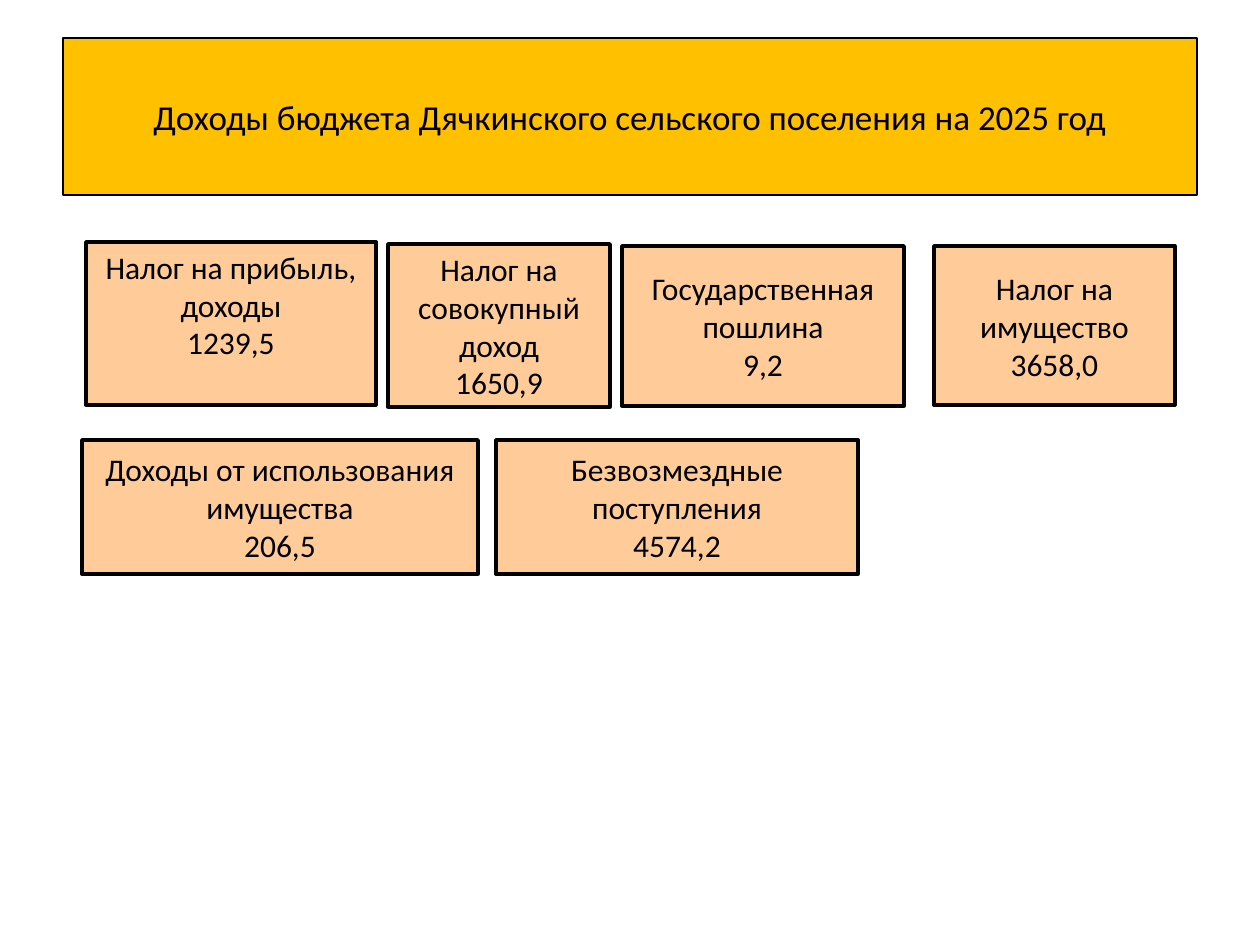
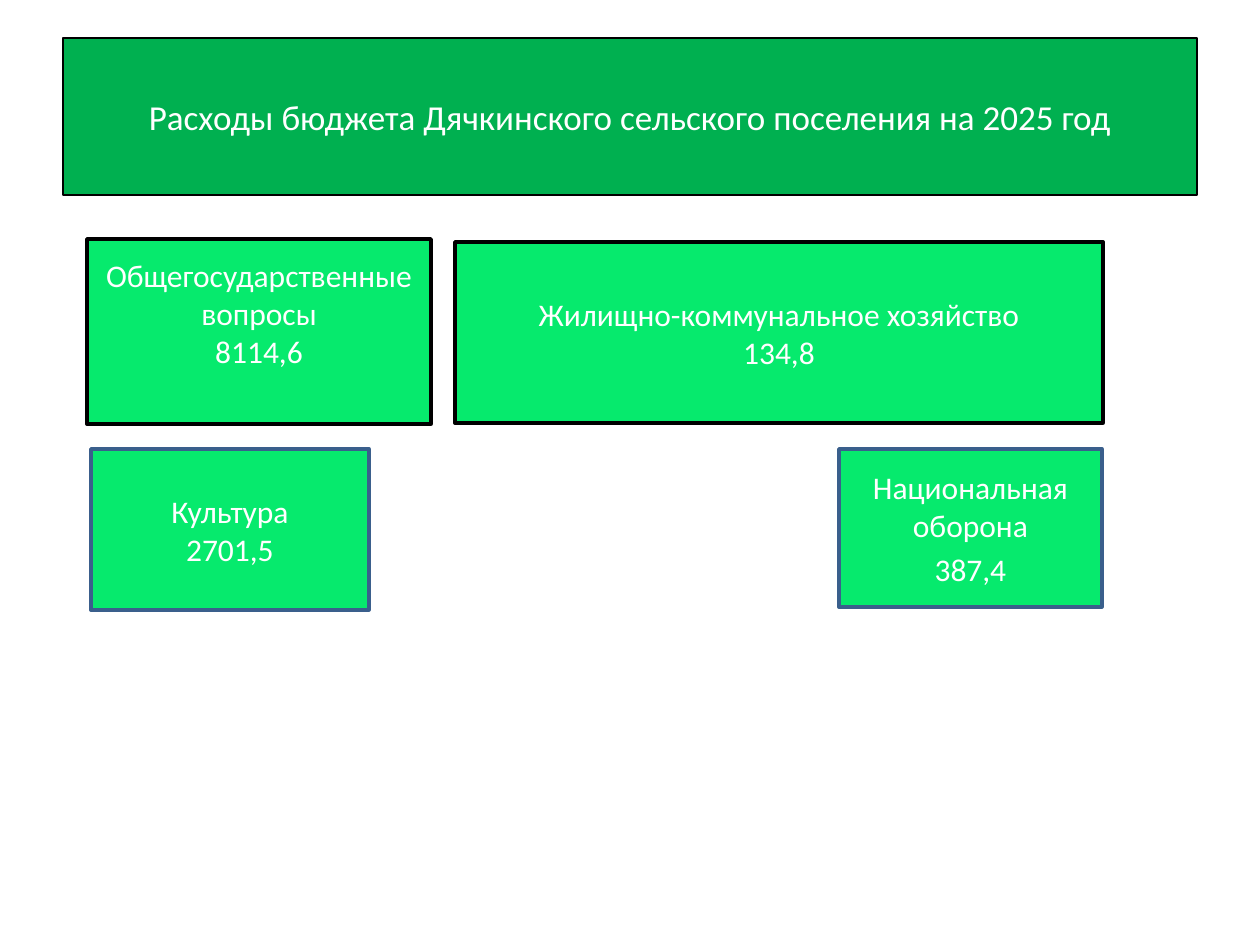
from pptx import Presentation
from pptx.dml.color import RGBColor
from pptx.enum.shapes import MSO_SHAPE
from pptx.enum.text import MSO_ANCHOR, PP_ALIGN
from pptx.util import Pt

RECT = MSO_SHAPE.RECTANGLE
MIDDLE = MSO_ANCHOR.MIDDLE
CENTER = PP_ALIGN.CENTER

BLACK = RGBColor(0x00, 0x00, 0x00)
WHITE = RGBColor(0xFF, 0xFF, 0xFF)
AMBER = RGBColor(0xFF, 0xC0, 0x00)
PEACH = RGBColor(0xFF, 0xCC, 0x99)
GREEN = RGBColor(0x00, 0xB0, 0x50)
LIME = RGBColor(0x06, 0xEA, 0x6D)
STEEL = RGBColor(0x3A, 0x5F, 0x8C)

FONT = "Calibri"
EMU_PER_PX = 914400 / 126
SLIDE_W, SLIDE_H = 1260, 945
TITLE_BOX = (63, 38, 1134, 157)
INSET = 6
LINE_H = 38

INCOME = [
    ((86, 242, 290, 163), "Налог на прибыль, доходы", "1239,5", {"lift": LINE_H}),
    ((388, 244, 222, 163), "Налог на совокупный доход", "1650,9", {}),
    ((622, 246, 282, 160), "Государственная пошлина", "9,2", {}),
    ((934, 246, 241, 159), "Налог на имущество", "3658,0", {}),
    ((82, 440, 396, 134), "Доходы от использования имущества", "206,5", {}),
    ((496, 440, 362, 134), "Безвозмездные поступления", "4574,2", {}),
]
SPENDING = [
    ((87, 239, 344, 185), "Общегосударственные вопросы", "8114,6", {"lift": LINE_H}),
    ((455, 242, 648, 181), "Жилищно-коммунальное хозяйство", "134,8", {}),
    ((91, 449, 278, 161), "Культура", "2701,5", {"line": STEEL}),
    ((839, 449, 263, 158), "Национальная оборона", "387,4",
     {"line": STEEL, "gap": 3.6}),
]


def px(n):
    return round(n * EMU_PER_PX)


def add_box(slide, box, lines, fill, color, size, line=BLACK, weight=2, lift=0, gap=0):
    sp = slide.shapes.add_shape(RECT, *map(px, box))
    sp.shadow.inherit = False
    sp.fill.solid()
    sp.fill.fore_color.rgb = fill
    sp.line.color.rgb = line
    sp.line.width = Pt(weight)
    tf = sp.text_frame
    tf.word_wrap = True
    tf.vertical_anchor = MIDDLE
    tf.margin_bottom = px(INSET + lift)
    for i, text in enumerate(lines):
        p = tf.add_paragraph() if i else tf.paragraphs[0]
        p.alignment = CENTER
        p.space_before = Pt(gap)
        r = p.add_run()
        r.text = text
        r.font.name = FONT
        r.font.size = Pt(size)
        r.font.color.rgb = color


def add_budget_slide(prs, title, items, title_fill, item_fill, color):
    slide = prs.slides.add_slide(prs.slide_layouts[6])
    add_box(slide, TITLE_BOX, [title], title_fill, color, 20, weight=0.75)
    for box, name, amount, style in items:
        add_box(slide, box, [name, amount], item_fill, color, 18, **style)


def main():
    prs = Presentation()
    prs.slide_width, prs.slide_height = px(SLIDE_W), px(SLIDE_H)
    add_budget_slide(prs, "Доходы бюджета Дячкинского сельского поселения на 2025 год",
                     INCOME, AMBER, PEACH, BLACK)
    add_budget_slide(prs, "Расходы бюджета Дячкинского сельского поселения на 2025 год",
                     SPENDING, GREEN, LIME, WHITE)
    prs.save("out.pptx")


if __name__ == "__main__":
    main()
